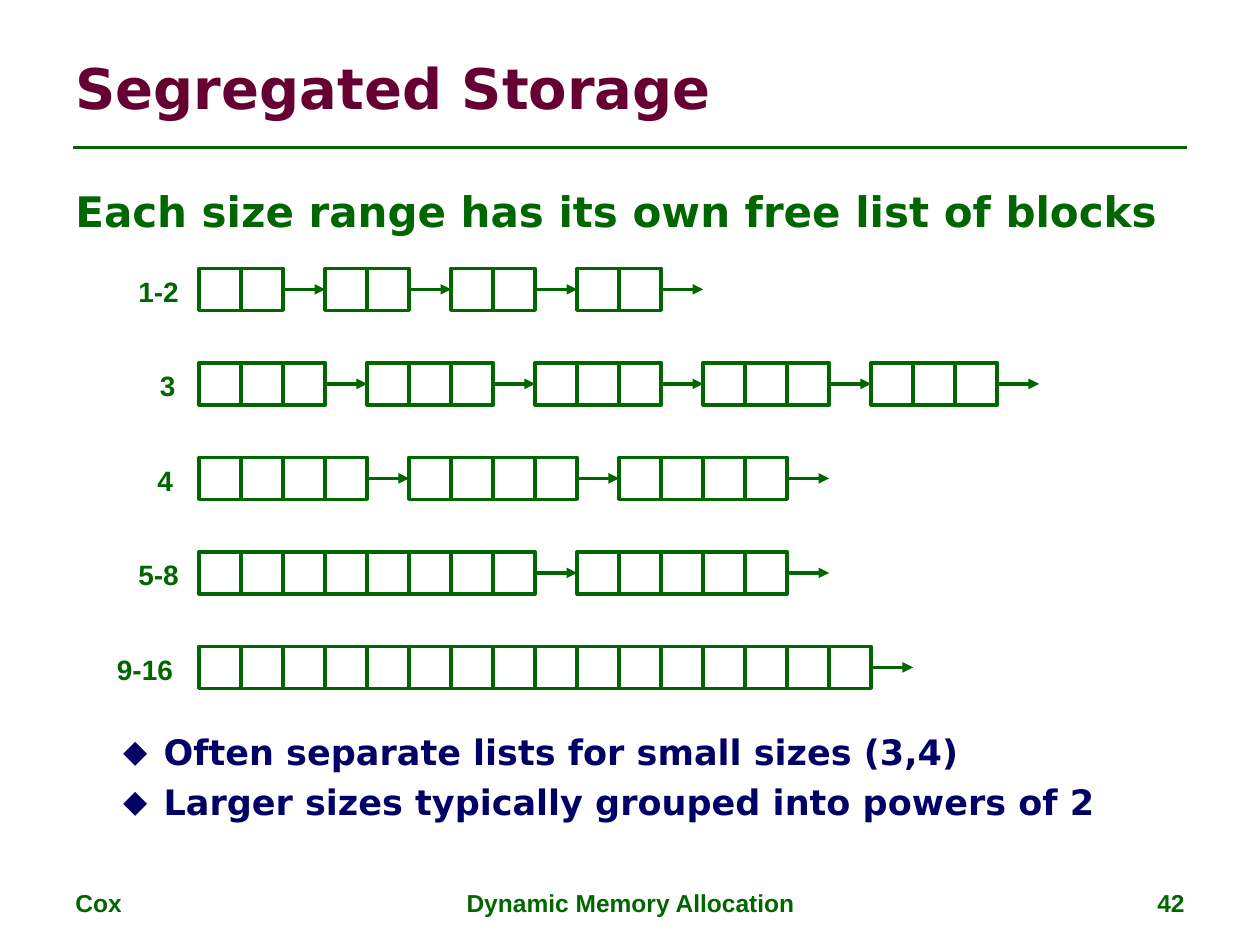
from lxml import etree
from pptx import Presentation
from pptx.dml.color import RGBColor
from pptx.enum.shapes import MSO_CONNECTOR, MSO_SHAPE
from pptx.enum.text import MSO_ANCHOR, PP_ALIGN
from pptx.oxml.ns import qn
from pptx.util import Inches, Pt

RECT = MSO_SHAPE.RECTANGLE
LINE = MSO_CONNECTOR.STRAIGHT
LEFT, MID, RIGHT = PP_ALIGN.LEFT, PP_ALIGN.CENTER, PP_ALIGN.RIGHT

GREEN, NAVY, WINE, WHITE = "006600", "000066", "660033", "FFFFFF"
SANS, HEAD = "Arial", "DejaVu Sans"

# Grid of the free lists, in inches
CELL = 1 / 3
LEFT_X, TOP_Y, ROW = 1.58, 2.13, 0.75

# Label, its left and width, and the cells in each block
LISTS = [
    ("1-2", 1.0, 0.52, [2, 2, 2, 2]),
    ("3", 1.17, 0.32, [3, 3, 3, 3, 3]),
    ("4", 1.15, 0.32, [4, 4, 4]),
    ("5-8", 1.0, 0.52, [8, 5]),
    ("9-16", 0.83, 0.65, [16]),
]
NOTES = [
    "Often separate lists for small sizes (3,4)",
    "Larger sizes typically grouped into powers of 2",
]


def paint(code):
    return RGBColor.from_string(code)


def style(frame, size, font, color, align=LEFT):
    for para in frame.paragraphs:
        para.alignment = align
        for run in para.runs:
            run.font.size = Pt(size)
            run.font.name = font
            run.font.bold = True
            run.font.color.rgb = paint(color)


def add_text(slide, box, text, size, font, color, align=LEFT, wrap=True):
    shape = slide.shapes.add_textbox(*map(Inches, box))
    frame = shape.text_frame
    frame.word_wrap = wrap
    frame.text = text
    style(frame, size, font, color, align)
    return frame


def add_title(slide, text):
    title = slide.shapes.title
    title.left, title.top, title.width, title.height = map(
        Inches, (0.5, 0.3, 9, 0.78))
    title.text_frame.text = text
    title.text_frame.vertical_anchor = MSO_ANCHOR.MIDDLE
    style(title.text_frame, 32, HEAD, WINE)


def add_line(slide, start, end, width, arrow=False):
    line = slide.shapes.add_connector(LINE, *map(Inches, (*start, *end)))
    line.line.color.rgb = paint(GREEN)
    line.line.width = Pt(width)
    if arrow:
        stroke = line.line._get_or_add_ln()
        etree.SubElement(stroke, qn("a:tailEnd"), type="triangle")
    etree.SubElement(line._element.spPr, qn("a:effectLst"))
    return line


def add_cell(slide, x, y):
    cell = slide.shapes.add_shape(RECT, *map(Inches, (x, y, CELL, CELL)))
    cell.shadow.inherit = False
    cell.fill.solid()
    cell.fill.fore_color.rgb = paint(WHITE)
    cell.line.color.rgb = paint(GREEN)
    cell.line.width = Pt(2)
    return cell


def add_list(slide, y, blocks):
    """Draw blocks of cells, with an arrow one cell long after each."""
    x, link = LEFT_X, None
    for count in blocks:
        cells = [add_cell(slide, x + i * CELL, y) for i in range(count)]
        if link:
            link.end_connect(cells[0], 1)
        x += count * CELL
        mid = y + CELL / 2
        link = add_line(slide, (x, mid), (x + CELL, mid), 2, arrow=True)
        link.begin_connect(cells[-1], 3)
        x += CELL


def add_bullets(slide, box, items):
    frame = add_text(slide, box, "\n".join(items), 20, HEAD, NAVY)
    for para in frame.paragraphs:
        para.space_after = Pt(4.4)
        props = para._p.get_or_add_pPr()
        props.set("marL", str(Inches(0.7)))
        props.set("indent", str(Inches(-0.32)))
        etree.SubElement(props, qn("a:buSzPct"), val="90000")
        etree.SubElement(props, qn("a:buFont"), typeface=HEAD)
        etree.SubElement(props, qn("a:buChar"), char="◆")


def main():
    prs = Presentation()
    prs.slide_width, prs.slide_height = Inches(10), Inches(7.5)
    slide = prs.slides.add_slide(prs.slide_layouts[5])

    # Heading
    add_title(slide, "Segregated Storage")
    add_line(slide, (0.58, 1.17), (9.42, 1.17), 1.5)
    add_text(slide, (0.5, 1.42, 9, 0.5),
             "Each size range has its own free list of blocks",
             24, HEAD, GREEN)

    # One free list per size range
    for row, (label, x, width, blocks) in enumerate(LISTS):
        y = TOP_Y + row * ROW
        add_text(slide, (x, y, width, 0.37), label, 16, SANS, GREEN,
                 wrap=False)
        add_list(slide, y, blocks)

    # Remarks
    add_bullets(slide, (0.5, 5.75, 9.33, 0.83), NOTES)

    # Footer
    for x, width, text, align in [
        (0.5, 2.33, "Cox", LEFT),
        (3.42, 3.17, "Dynamic Memory Allocation", MID),
        (7.17, 2.33, "42", RIGHT),
    ]:
        add_text(slide, (x, 7, width, 0.35), text, 14, SANS, GREEN, align)

    prs.save("out.pptx")


if __name__ == "__main__":
    main()
